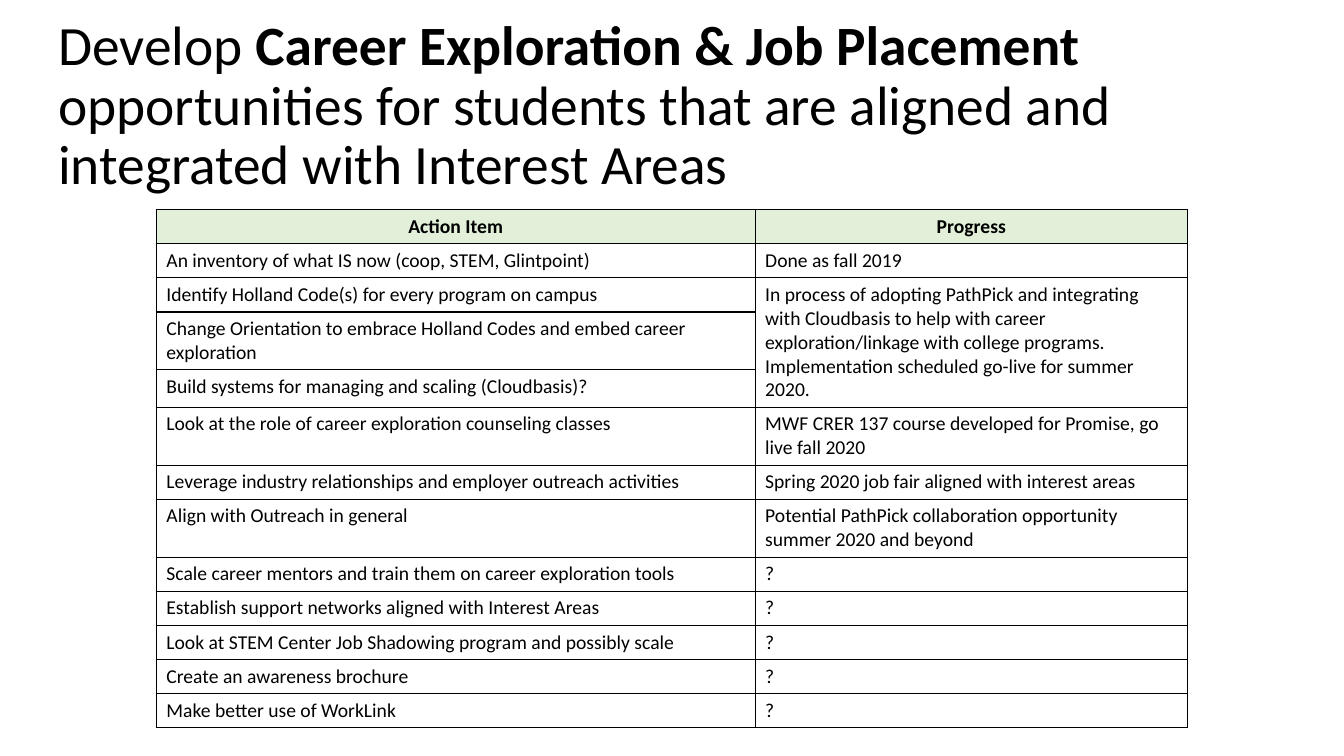
from lxml.etree import SubElement
from pptx import Presentation
from pptx.dml.color import RGBColor
from pptx.enum.text import MSO_ANCHOR, PP_ALIGN
from pptx.oxml.ns import qn
from pptx.util import Cm, Pt

FONT = "Calibri"
COLORS = {"text": "000000", "border": "000000", "header": "E2F0D9"}

TITLE_RUNS = [
    ("Develop ", False),
    ("Career Exploration & Job Placement ", True),
    ("opportunities for students that are aligned and integrated with Interest Areas", False),
]

COLUMN_WIDTHS = [15.09, 10.9]
ONE_LINE, MERGED_LAST, TWO_LINES = 0.86, 0.94, 1.46

# Row height, action item, progress; None continues the progress cell above.
ROWS = [
    (ONE_LINE, "Action Item", "Progress"),
    (ONE_LINE, "An inventory of what IS now (coop, STEM, Glintpoint)", "Done as fall 2019"),
    (ONE_LINE, "Identify Holland Code(s) for every program on campus",
     "In process of adopting PathPick and integrating with Cloudbasis to help with career "
     "exploration/linkage with college programs. Implementation scheduled go-live for "
     "summer 2020."),
    (TWO_LINES, "Change Orientation to embrace Holland Codes and embed career exploration", None),
    (MERGED_LAST, "Build systems for managing and scaling (Cloudbasis)?", None),
    (TWO_LINES, "Look at the role of career exploration counseling classes",
     "MWF CRER 137 course developed for Promise, go live fall 2020"),
    (ONE_LINE, "Leverage industry relationships and employer outreach activities",
     "Spring 2020 job fair aligned with interest areas"),
    (TWO_LINES, "Align with Outreach in general",
     "Potential PathPick collaboration opportunity summer 2020 and beyond"),
    (ONE_LINE, "Scale career mentors and train them on career exploration tools", "?"),
    (ONE_LINE, "Establish support networks aligned with Interest Areas", "?"),
    (ONE_LINE, "Look at STEM Center Job Shadowing program and possibly scale", "?"),
    (ONE_LINE, "Create an awareness brochure", "?"),
    (ONE_LINE, "Make better use of WorkLink", "?"),
]


def style_font(font, size):
    font.name = FONT
    font.size = Pt(size)
    font.color.rgb = RGBColor.from_string(COLORS["text"])


def add_title(slide):
    box = slide.shapes.add_textbox(Cm(1.22), Cm(0.86), Cm(29.21), Cm(3.68))
    frame = box.text_frame
    frame.word_wrap = True
    frame.vertical_anchor = MSO_ANCHOR.MIDDLE
    paragraph = frame.paragraphs[0]
    paragraph.line_spacing = 0.9
    style_font(paragraph.font, 39.6)
    for text, bold in TITLE_RUNS:
        run = paragraph.add_run()
        run.text = text
        run.font.bold = bold


def add_borders(cell):
    """Draw a 1 pt line on all four sides; call before setting the fill."""
    properties = cell._tc.get_or_add_tcPr()
    for side in ("a:lnL", "a:lnR", "a:lnT", "a:lnB"):
        line = SubElement(properties, qn(side), w=str(Pt(1)))
        fill = SubElement(line, qn("a:solidFill"))
        SubElement(fill, qn("a:srgbClr"), val=COLORS["border"])


def style_cell(cell, is_header):
    add_borders(cell)
    if is_header:
        cell.fill.solid()
        cell.fill.fore_color.rgb = RGBColor.from_string(COLORS["header"])
    else:
        cell.fill.background()
    paragraph = cell.text_frame.paragraphs[0]
    paragraph.alignment = PP_ALIGN.CENTER if is_header else PP_ALIGN.LEFT
    style_font(paragraph.font, 14)
    paragraph.font.bold = is_header


def add_action_table(slide):
    heights = [row[0] for row in ROWS]
    table = slide.shapes.add_table(
        len(ROWS), len(COLUMN_WIDTHS), Cm(3.94), Cm(5.28),
        Cm(sum(COLUMN_WIDTHS)), Cm(sum(heights)),
    ).table
    table.horz_banding = False
    for column, width in zip(table.columns, COLUMN_WIDTHS):
        column.width = Cm(width)
    for row_index, (height, *texts) in enumerate(ROWS):
        table.rows[row_index].height = Cm(height)
        for column_index, text in enumerate(texts):
            cell = table.cell(row_index, column_index)
            cell.text = text or ""
            style_cell(cell, row_index == 0)
    continued = [index for index, row in enumerate(ROWS) if row[2] is None]
    table.cell(continued[0] - 1, 1).merge(table.cell(continued[-1], 1))


def main():
    presentation = Presentation()
    presentation.slide_width = Cm(33.87)
    presentation.slide_height = Cm(19.05)
    slide = presentation.slides.add_slide(presentation.slide_layouts[6])
    add_title(slide)
    add_action_table(slide)
    presentation.save("out.pptx")


if __name__ == "__main__":
    main()
